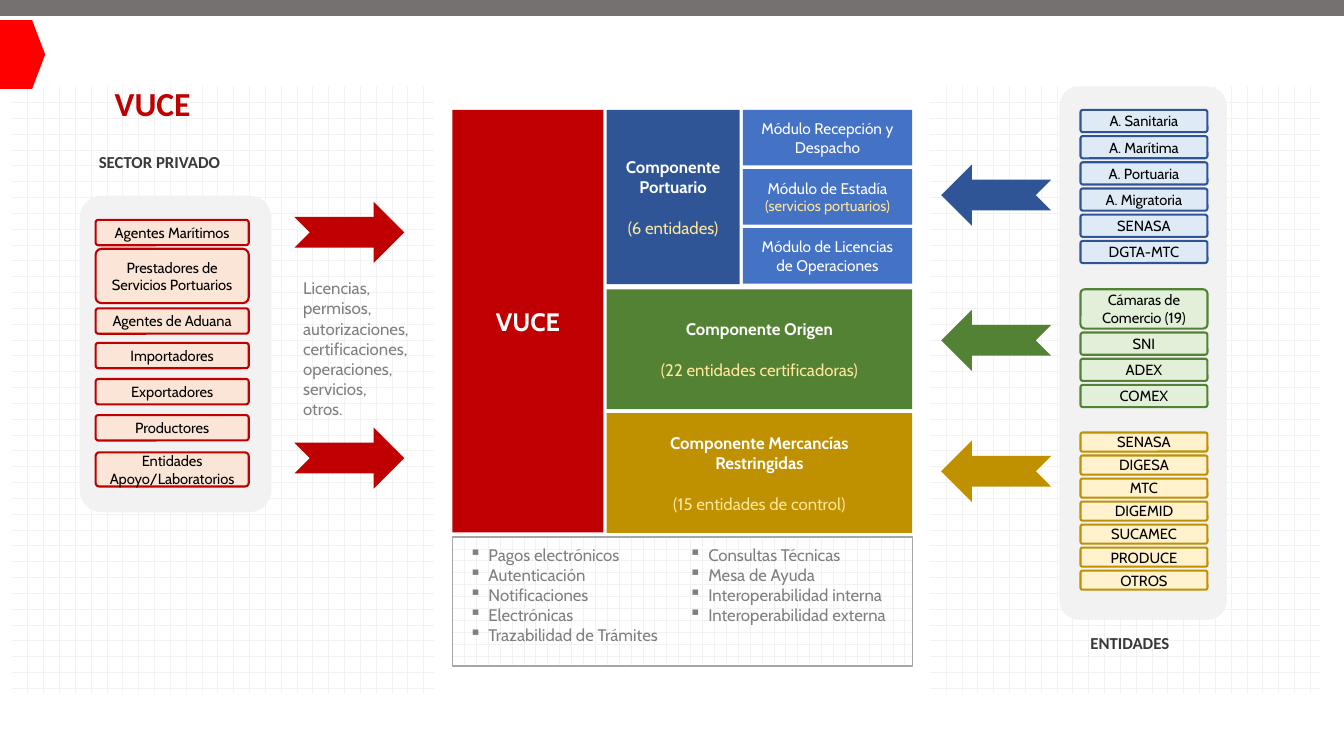
"""Build the VUCE overview slide: private sector, components and public entities."""
import pptx
import pptx.dml.color
import pptx.enum.dml
import pptx.enum.shapes
import pptx.enum.text
import pptx.util
from lxml import etree

Cm = pptx.util.Cm
Pt = pptx.util.Pt
RGB = pptx.dml.color.RGBColor.from_string
SHAPE = pptx.enum.shapes.MSO_SHAPE
PATTERN = pptx.enum.dml.MSO_PATTERN
ALIGN = pptx.enum.text.PP_ALIGN
ANCHOR = pptx.enum.text.MSO_ANCHOR

COLORS = {
    "red": "C00000", "peach": "FBE5D6", "bright_red": "FF0000",
    "blue": "2F5597", "light_blue": "DEEBF7", "module": "4472C4",
    "green": "548235", "light_green": "E2F0D9",
    "gold": "BF9000", "light_gold": "FFF2CC", "yellow": "FFE699",
    "white": "FFFFFF", "black": "000000", "panel": "F2F2F2",
    "bar": "767171", "border": "A6A6A6", "text": "808080", "heading": "3B3838",
}

presentation = pptx.Presentation()
presentation.slide_width = Cm(33.87)
presentation.slide_height = Cm(19.05)
slide = presentation.slides.add_slide(presentation.slide_layouts[6])


def add_box(kind, box, fill, line=None, width=1, pattern=None, corner=None):
    shape = slide.shapes.add_shape(kind, *[Cm(length) for length in box])
    shape.shadow.inherit = False
    if pattern:
        shape.fill.patterned()
        shape.fill.pattern = pattern
        shape.fill.fore_color.rgb = RGB(COLORS[fill])
        shape.fill.back_color.rgb = RGB(COLORS["white"])
    else:
        shape.fill.solid()
        shape.fill.fore_color.rgb = RGB(COLORS[fill])
    if line:
        shape.line.color.rgb = RGB(COLORS[line])
        shape.line.width = Pt(width)
    else:
        shape.line.fill.background()
    if corner:
        shape.adjustments[0] = corner
    return shape


def write(shape, lines, size, color, bold=False, font="Cabin", align=ALIGN.CENTER, before=0):
    frame = shape.text_frame
    frame.word_wrap = True
    for index, line in enumerate(lines):
        paragraph = frame.add_paragraph() if frame.text else frame.paragraphs[0]
        paragraph.alignment = align
        if before and index == 0:
            paragraph.space_before = Pt(before)
        run = paragraph.add_run()
        run.text = line
        run.font.size = Pt(size)
        run.font.name = font
        run.font.bold = bold
        run.font.color.rgb = RGB(COLORS[color])


for left, width in [(23.44, 9.83), (0.3, 10.64)]:
    add_box(SHAPE.RECTANGLE, (left, 2.18, width, 15.29), "panel", pattern=PATTERN.DOTTED_GRID)
for box in [(2.01, 4.93, 4.83, 7.98), (26.7, 2.18, 4.22, 13.44)]:
    add_box(SHAPE.ROUNDED_RECTANGLE, box, "panel", corner=0.116)

headings = [
    ("VUCE", 24, "red", (2.64, 1.96, 3.63, 1.27)),
    ("SECTOR PRIVADO", 12, "heading", (2.24, 3.71, 4.32, 0.76)),
    ("ENTIDADES", 12, "heading", (27.23, 15.82, 2.97, 0.76)),
]
for text, size, color, box in headings:
    heading = slide.shapes.add_textbox(*[Cm(length) for length in box])
    write(heading, [text], size, color, bold=True, font="Calibri", align=ALIGN.LEFT)

private_sector = [
    (["Agentes Marítimos"], 5.54, 0.64),
    (["Prestadores de Servicios Portuarios"], 6.27, 1.37),
    (["Agentes de Aduana"], 7.77, 0.64),
    (["Importadores"], 8.64, 0.64),
    (["Exportadores"], 9.55, 0.64),
    (["Productores"], 10.46, 0.64),
    (["Entidades", "Apoyo/Laboratorios"], 11.4, 0.86),
]
for lines, top, height in private_sector:
    card = add_box(SHAPE.ROUNDED_RECTANGLE, (2.41, top, 3.86, height),
                   "peach", "red", 1.5, corner=0.11)
    write(card, lines, 10.5, "black")

vuce = add_box(SHAPE.RECTANGLE, (11.4, 2.77, 3.81, 10.65), "red")
write(vuce, ["VUCE"], 18, "white", bold=True)

components = [
    (["Componente", "Portuario"], "(6 entidades)", "blue", (15.29, 2.77, 3.35, 4.39), 0.25),
    (["Componente Origen"], "(22 entidades certificadoras)", "green",
     (15.29, 7.29, 7.7, 3.02), 0.9),
    (["Componente Mercancías Restringidas"], "(15 entidades de control)", "gold",
     (15.29, 10.41, 7.7, 3.02), 0.9),
]
for title, count, color, box, margin in components:
    component = add_box(SHAPE.RECTANGLE, box, color)
    component.text_frame.margin_left = component.text_frame.margin_right = Cm(margin)
    write(component, title, 12, "white", bold=True)
    write(component, [count], 12, "yellow", before=14.5)

modules = [
    ("Módulo Recepción y Despacho", None),
    ("Módulo de Estadía", "(servicios portuarios)"),
    ("Módulo de Licencias de Operaciones", None),
]
for row, (title, detail) in enumerate(modules):
    module = add_box(SHAPE.RECTANGLE, (18.72, 2.77 + 1.49 * row, 4.27, 1.4), "module")
    write(module, [title], 11, "white")
    if detail:
        write(module, [detail], 10.5, "yellow")

add_box(SHAPE.RECTANGLE, (11.4, 13.53, 11.6, 3.25), "panel", "border",
        pattern=PATTERN.HORIZONTAL_BRICK)
services = [
    (11.58, ["Pagos electrónicos", "Autenticación", "Notificaciones", "Electrónicas",
             "Trazabilidad de Trámites"]),
    (17.12, ["Consultas Técnicas", "Mesa de Ayuda", "Interoperabilidad interna",
             "Interoperabilidad externa"]),
]
for left, lines in services:
    service_list = slide.shapes.add_textbox(Cm(left), Cm(13.59), Cm(6.38), Cm(3.05))
    write(service_list, lines, 12, "text", align=ALIGN.LEFT)
    for paragraph in service_list.text_frame.paragraphs:
        properties = paragraph._p.get_or_add_pPr()
        properties.set("marL", str(Cm(0.48)))
        properties.set("indent", str(-Cm(0.48)))
        bullet = etree.SubElement(properties, pptx.oxml.ns.qn("a:buChar"))
        bullet.set("char", "▪")

procedures = slide.shapes.add_textbox(Cm(7.39), Cm(6.88), Cm(5.82), Cm(3.84))
write(procedures, ["Licencias,", "permisos,", "autorizaciones,", "certificaciones,",
                   "operaciones,", "servicios,", "otros."], 12, "text", align=ALIGN.LEFT)

entity_groups = [
    (2.77, 0.56, "light_blue", "blue",
     [["A. Sanitaria"], ["A. Marítima"], ["A. Portuaria"], ["A. Migratoria"],
      ["SENASA"], ["DGTA-MTC"]]),
    (7.29, 0.56, "light_green", "green",
     [["Cámaras de", "Comercio (19)"], ["SNI"], ["ADEX"], ["COMEX"]]),
    (10.9, 0.48, "light_gold", "gold",
     [["SENASA"], ["DIGESA"], ["MTC"], ["DIGEMID"], ["SUCAMEC"], ["PRODUCE"], ["OTROS"]]),
]
for top, row_height, fill, line, entities in entity_groups:
    for lines in entities:
        height = row_height if len(lines) == 1 else 0.99
        entity = add_box(SHAPE.ROUNDED_RECTANGLE, (27.23, top, 3.2, height),
                         fill, line, 1.5, corner=0.109)
        write(entity, lines, 10.5, "black")
        top += height + 0.1

arrows = [
    (7.42, 5.08, "red", 0), (7.42, 10.77, "red", 0),
    (23.72, 4.14, "blue", 180), (23.72, 7.8, "green", 180), (23.72, 11.1, "gold", 180),
]
for left, top, color, rotation in arrows:
    arrow = add_box(SHAPE.NOTCHED_RIGHT_ARROW, (left, top, 2.77, 1.55), color)
    arrow.rotation = rotation

add_box(SHAPE.PENTAGON, (0, 0.51, 1.14, 1.73), "bright_red", corner=0.288)
add_box(SHAPE.RECTANGLE, (0, 0, 33.87, 0.38), "bar", "bar")

for shape in slide.shapes:
    if shape.shape_type == pptx.enum.shapes.MSO_SHAPE_TYPE.AUTO_SHAPE:
        shape.text_frame.vertical_anchor = ANCHOR.MIDDLE

presentation.save("out.pptx")
